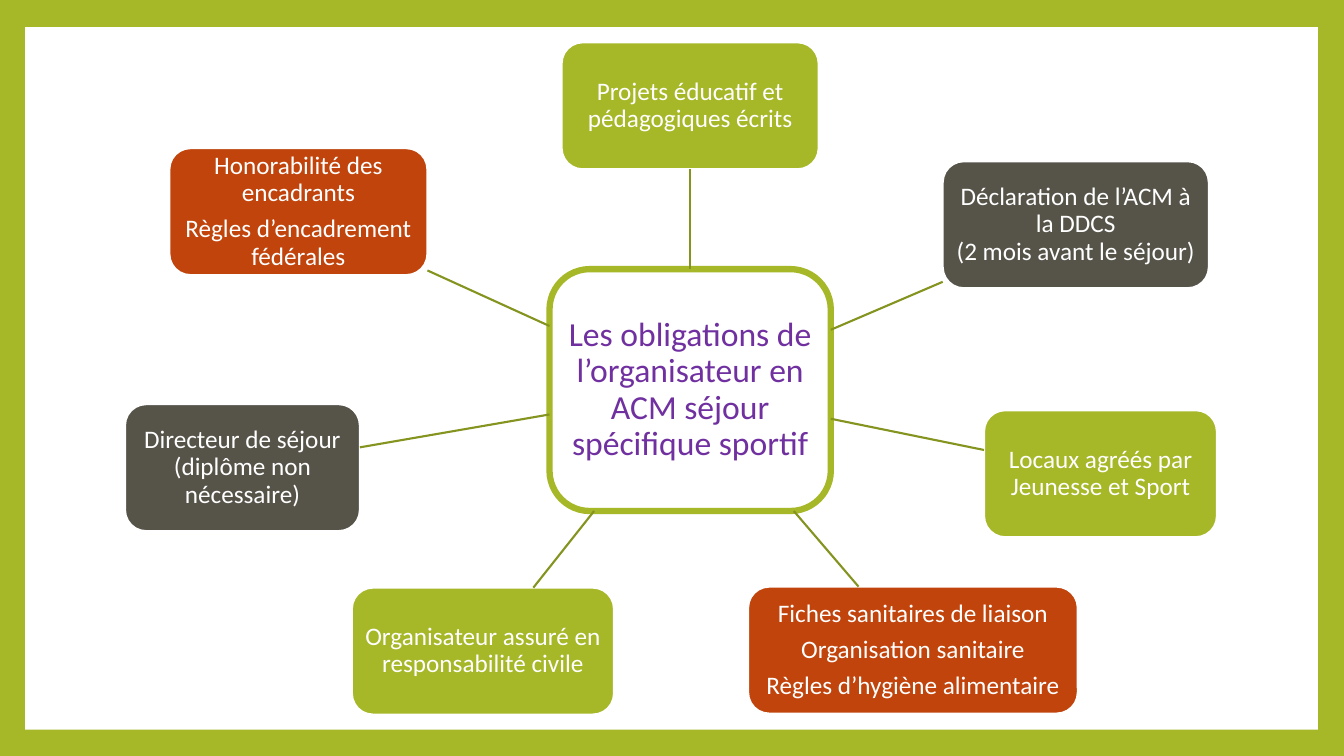
from dataclasses import dataclass

from lxml import etree
from pptx import Presentation
from pptx.dml.color import RGBColor
from pptx.enum.shapes import MSO_CONNECTOR as Connector, MSO_SHAPE as Preset
from pptx.enum.text import MSO_ANCHOR as Anchor, PP_ALIGN as Align
from pptx.oxml.ns import qn
from pptx.util import Inches, Pt


@dataclass(frozen=True)
class Theme:
    """Colours, font and sizes of the slide."""
    green: str = "A6B727"
    grey: str = "565349"
    rust: str = "C1440C"
    white: str = "FFFFFF"
    purple: str = "7030A0"
    spoke: str = "85931F"
    font: str = "Calibri"
    hub_size: float = 24
    topic_size: float = 18
    hub_line: float = 4.5
    thin_line: float = 1.5
    gap_ratio: float = 0.35


THEME = Theme()
TOPIC_HEIGHT = 1.26
HUB_TEXT = "Les obligations de l’organisateur en ACM séjour spécifique sportif"
TOPICS = [
    (5.57, 0.42, 2.55, THEME.green, ["Projets éducatif et pédagogiques écrits"]),
    (9.35, 1.6, 2.64, THEME.grey,
     ["Déclaration de l’ACM à la DDCS", "(2 mois avant le séjour)"]),
    (9.76, 4.07, 2.31, THEME.green, ["Locaux agréés par Jeunesse et Sport"]),
    (7.42, 5.82, 3.27, THEME.rust,
     ["Fiches sanitaires de liaison", "Organisation sanitaire",
      "Règles d’hygiène alimentaire"]),
    (3.49, 5.83, 2.6, THEME.green, ["Organisateur assuré en responsabilité civile"]),
    (1.24, 4.01, 2.33, THEME.grey, ["Directeur de séjour (diplôme non nécessaire)"]),
    (1.68, 1.47, 2.56, THEME.rust,
     ["Honorabilité des encadrants", "Règles d’encadrement fédérales"]),
]


def colour(code):
    """Turn a hex code into a colour."""
    return RGBColor.from_string(code)


def apply(target, values):
    """Set each attribute in the dict on the target."""
    for name, value in values.items():
        setattr(target, name, value)


def add_box(page, preset, bounds, fill, line=None, width=0):
    """Add a filled preset shape, outlined when a line colour is given."""
    box = page.shapes.add_shape(preset, *map(Inches, bounds))
    box.shadow.inherit = False
    box.fill.solid()
    box.fill.fore_color.rgb = colour(fill)
    if line:
        box.line.color.rgb = colour(line)
        box.line.width = Pt(width)
    else:
        box.line.fill.background()
    return box


def write(box, lines, size, code, inset, tight=False):
    """Centre the lines in the box, one paragraph each."""
    frame = box.text_frame
    sides = ("margin_left", "margin_top", "margin_right", "margin_bottom")
    apply(frame, dict.fromkeys(sides, Inches(inset)))
    apply(frame, {"word_wrap": True, "vertical_anchor": Anchor.MIDDLE})
    for index, line in enumerate(lines):
        para = frame.paragraphs[0] if index == 0 else frame.add_paragraph()
        joined = tight and index < len(lines) - 1
        gap = 0 if joined else size * THEME.gap_ratio
        apply(para, {"alignment": Align.CENTER, "line_spacing": 0.9,
                     "space_after": Pt(gap)})
        span = para.add_run()
        span.text = line
        apply(span.font, {"name": THEME.font, "size": Pt(size)})
        span.font.color.rgb = colour(code)


def centre(box):
    """Return the middle point of a box."""
    return box.left + box.width / 2, box.top + box.height / 2


def edge_point(box, other):
    """Return where the line between two box centres leaves the first box."""
    (x, y), (far_x, far_y) = centre(box), centre(other)
    run, rise = far_x - x, far_y - y
    scale = 0.5 / max(abs(run) / box.width, abs(rise) / box.height)
    return round(x + run * scale), round(y + rise * scale)


def add_spoke(page, hub, topic):
    """Draw the line from the hub edge to the topic edge."""
    start, end = edge_point(hub, topic), edge_point(topic, hub)
    spoke = page.shapes.add_connector(Connector.STRAIGHT, *start, *end)
    spoke.line.color.rgb = colour(THEME.spoke)
    spoke.line.width = Pt(THEME.thin_line)
    etree.SubElement(spoke.element.spPr, qn("a:effectLst"))
    if abs(start[0] - centre(hub)[0]) < Inches(0.01):
        spoke.begin_connect(hub, 0)
        spoke.end_connect(topic, 2)


def main():
    """Build the slide and save it."""
    deck = Presentation()
    apply(deck, {"slide_width": Inches(13.33), "slide_height": Inches(7.5)})
    page = deck.slides.add_slide(deck.slide_layouts[6])
    page.background.fill.solid()
    page.background.fill.fore_color.rgb = colour(THEME.green)
    add_box(page, Preset.RECTANGLE, (0.25, 0.27, 12.82, 6.97), THEME.white)
    hub = add_box(page, Preset.ROUNDED_RECTANGLE, (5.45, 2.67, 2.79, 2.4),
                  THEME.white, THEME.green, THEME.hub_line)
    write(hub, [HUB_TEXT], THEME.hub_size, THEME.purple, 0.07)
    for left, top, width, fill, lines in TOPICS:
        topic = add_box(page, Preset.ROUNDED_RECTANGLE,
                        (left, top, width, TOPIC_HEIGHT),
                        fill, THEME.white, THEME.thin_line)
        write(topic, lines, THEME.topic_size, THEME.white, 0.05,
              tight=fill == THEME.grey)
        add_spoke(page, hub, topic)
    deck.save("out.pptx")


if __name__ == "__main__":
    main()
